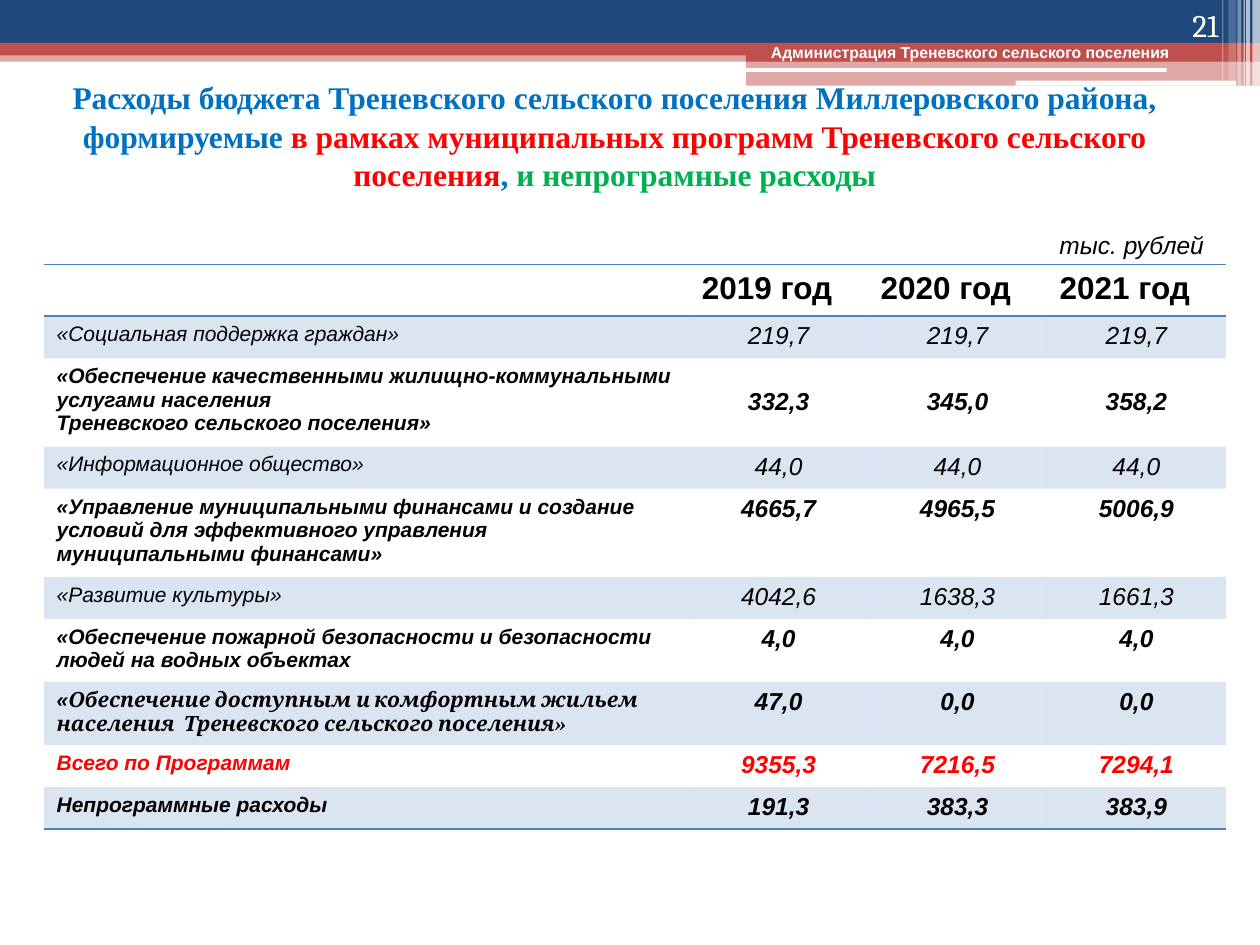
from lxml.etree import SubElement
from pptx import Presentation
from pptx.dml.color import RGBColor
from pptx.enum.shapes import MSO_SHAPE
from pptx.enum.text import MSO_ANCHOR, PP_ALIGN
from pptx.oxml import parse_xml
from pptx.oxml.ns import nsdecls, qn
from pptx.util import Inches, Pt

COLORS = {
    "navy": "1F497D", "brick": "C0504D", "white": "FFFFFF", "black": "000000",
    "blue": "0070C0", "red": "FF0000", "green": "00B050", "steel": "4F81BD",
}
NO_STYLE = "{2D5ABB26-0587-4C30-8999-92F81FD0307C}"
BANDS = [
    (0, 0.4, 10, 0.09, "brick", 50),
    (0, 0, 10, 0.34, "navy", 100),
    (0, 0.34, 10, 0.1, "brick", 100),
    (5.92, 0.39, 4.08, 0.1, "brick", 100),
    (5.92, 0.48, 4.08, 0.2, "brick", 50),
]
PILLS = [(5.91, 0.54, 3.35, 0.03), (8.06, 0.64, 1.75, 0.04)]
STRIPES = [
    (9.94, 0.06, 0.68, 65), (9.89, 0.03, 0.68, 65), (9.87, 0.01, 0.68, 60),
    (9.82, 0.03, 0.68, 40), (9.75, 0.06, 0.64, 20), (9.7, 0.01, 0.64, 30),
]
TITLE = [
    ("Расходы бюджета Треневского сельского поселения Миллеровского района, формируемые ", "blue"),
    ("в рамках муниципальных программ Треневского сельского поселения", "red"),
    (", ", "blue"),
    ("и непрограмные расходы", "green"),
]
YEARS = ["2019 год", "2020 год", "2021 год"]
PROGRAMS = [
    ("«Социальная поддержка граждан»", "219,7 219,7 219,7", 0.32, {"bold": False}),
    ("«Обеспечение качественными жилищно-коммунальными услугами населения\n"
     "Треневского сельского поселения»", "332,3 345,0 358,2", 0.66, {}),
    ("«Информационное общество»", "44,0 44,0 44,0", 0.32, {"bold": False}),
    ("«Управление муниципальными финансами и создание условий для эффективного "
     "управления муниципальными финансами»", "4665,7 4965,5 5006,9", 0.66, {}),
    ("«Развитие культуры»", "4042,6 1638,3 1661,3", 0.32, {"bold": False}),
    ("«Обеспечение пожарной безопасности и безопасности людей на водных объектах",
     "4,0 4,0 4,0", 0.48, {}),
    ("«Обеспечение доступным и комфортным жильем населения  Треневского сельского поселения»",
     "47,0 0,0 0,0", 0.48, {"label_font": "Cambria"}),
    ("Всего по Программам", "9355,3 7216,5 7294,1", 0.32, {"color": "red"}),
    ("Непрограммные расходы", "191,3 383,3 383,9", 0.32, {}),
]


def set_fill(fill, element, color, opacity=100):
    fill.solid()
    fill.fore_color.rgb = RGBColor.from_string(COLORS[color])
    if opacity < 100:
        color_element = next(element.iter(qn("a:srgbClr")))
        SubElement(color_element, qn("a:alpha")).set("val", str(opacity * 1000))


def add_block(slide, box, color, opacity=100, kind=MSO_SHAPE.RECTANGLE):
    shape = slide.shapes.add_shape(kind, *map(Inches, box))
    shape.shadow.inherit = False
    shape.line.fill.background()
    set_fill(shape.fill, shape.element, color, opacity)


def add_run(paragraph, text, color="black", **formats):
    run = paragraph.add_run()
    run.text = text
    run.font.color.rgb = RGBColor.from_string(COLORS[color])
    for name, value in formats.items():
        setattr(run.font, name, value)


def add_text(slide, box, runs, align=PP_ALIGN.LEFT, anchor=MSO_ANCHOR.TOP, **formats):
    frame = slide.shapes.add_textbox(*map(Inches, box)).text_frame
    frame.word_wrap = True
    frame.vertical_anchor = anchor
    paragraph = frame.paragraphs[0]
    paragraph.alignment = align
    for text, color in runs:
        add_run(paragraph, text, color, **formats)
    return frame


def add_borders(cell, sides):
    properties = cell._tc.get_or_add_tcPr()
    for index, side in enumerate(sides):
        properties.insert(index, parse_xml(
            f'<a:{side} {nsdecls("a")} w="12700"><a:solidFill>'
            f'<a:srgbClr val="{COLORS["steel"]}"/></a:solidFill></a:{side}>'))


def fill_label(cell, label, font, **formats):
    frame = cell.text_frame
    for index, line in enumerate(label.split("\n")):
        paragraph = frame.add_paragraph() if index else frame.paragraphs[0]
        if font != "Arial":
            add_run(paragraph, line[0], name="Arial", size=Pt(12), **formats)
            line = line[1:]
        add_run(paragraph, line, name=font, size=Pt(12), **formats)


def add_budget_table(slide):
    heights = [0.41] + [height for _, _, height, _ in PROGRAMS]
    widths = [5.12] + [1.42] * len(YEARS)
    box = (0.35, 2.1, sum(widths), sum(heights))
    frame = slide.shapes.add_table(len(heights), len(widths), *map(Inches, box))
    table = frame.table
    next(frame.element.iter(qn("a:tableStyleId"))).text = NO_STYLE
    for column, width in zip(table.columns, widths):
        column.width = Inches(width)
    for row, height in zip(table.rows, heights):
        row.height = Inches(height)

    for index, year in enumerate(YEARS, 1):
        add_run(table.cell(0, index).text_frame.paragraphs[0], year,
                name="Arial", size=Pt(18), bold=True)
    for index, (label, values, _, options) in enumerate(PROGRAMS, 1):
        formats = {"color": options.get("color", "black"),
                   "bold": options.get("bold", True), "italic": True}
        fill_label(table.cell(index, 0), label, options.get("label_font", "Arial"), **formats)
        for column, value in enumerate(values.split(), 1):
            cell = table.cell(index, column)
            if "\n" in label:
                cell.vertical_anchor = MSO_ANCHOR.MIDDLE
            paragraph = cell.text_frame.paragraphs[0]
            paragraph.alignment = PP_ALIGN.CENTER
            add_run(paragraph, value, name="Arial", size=Pt(14), **formats)

    for index, row in enumerate(table.rows):
        for cell in row.cells:
            if index % 2:
                set_fill(cell.fill, cell._tc.tcPr, "steel", 20)
            else:
                cell.fill.background()
            if index == 0:
                add_borders(cell, ["lnT", "lnB"])
            elif index == len(PROGRAMS):
                add_borders(cell, ["lnB"])


def add_header(slide):
    for *box, color, opacity in BANDS:
        add_block(slide, box, color, opacity)
    for box in PILLS:
        add_block(slide, box, "white", kind=MSO_SHAPE.ROUNDED_RECTANGLE)
    for left, width, height, opacity in STRIPES:
        add_block(slide, (left, 0, width, height), "white", opacity)
    add_text(slide, (6.02, 0.29, 3.54, 0.25),
             [("Администрация Треневского сельского поселения", "white")],
             name="Arial", size=Pt(9), bold=True)
    add_text(slide, (8.94, 0, 0.83, 0.4), [("21", "white")], PP_ALIGN.RIGHT,
             MSO_ANCHOR.BOTTOM, name="Cambria", size=Pt(18))


def main():
    presentation = Presentation()
    presentation.slide_width, presentation.slide_height = Inches(10), Inches(7.5)
    slide = presentation.slides.add_slide(presentation.slide_layouts[6])
    add_header(slide)
    title = add_text(slide, (0, 0.6, 9.76, 1.26), TITLE, PP_ALIGN.CENTER,
                     name="Times New Roman", size=Pt(18), bold=True)
    title.margin_top = Inches(0.02)
    title.paragraphs[0].line_spacing = Pt(21.8)
    add_budget_table(slide)
    add_text(slide, (8.31, 1.78, 1.42, 0.34), [("тыс. рублей", "black")],
             name="Arial", size=Pt(14), italic=True)
    presentation.save("out.pptx")


if __name__ == "__main__":
    main()
